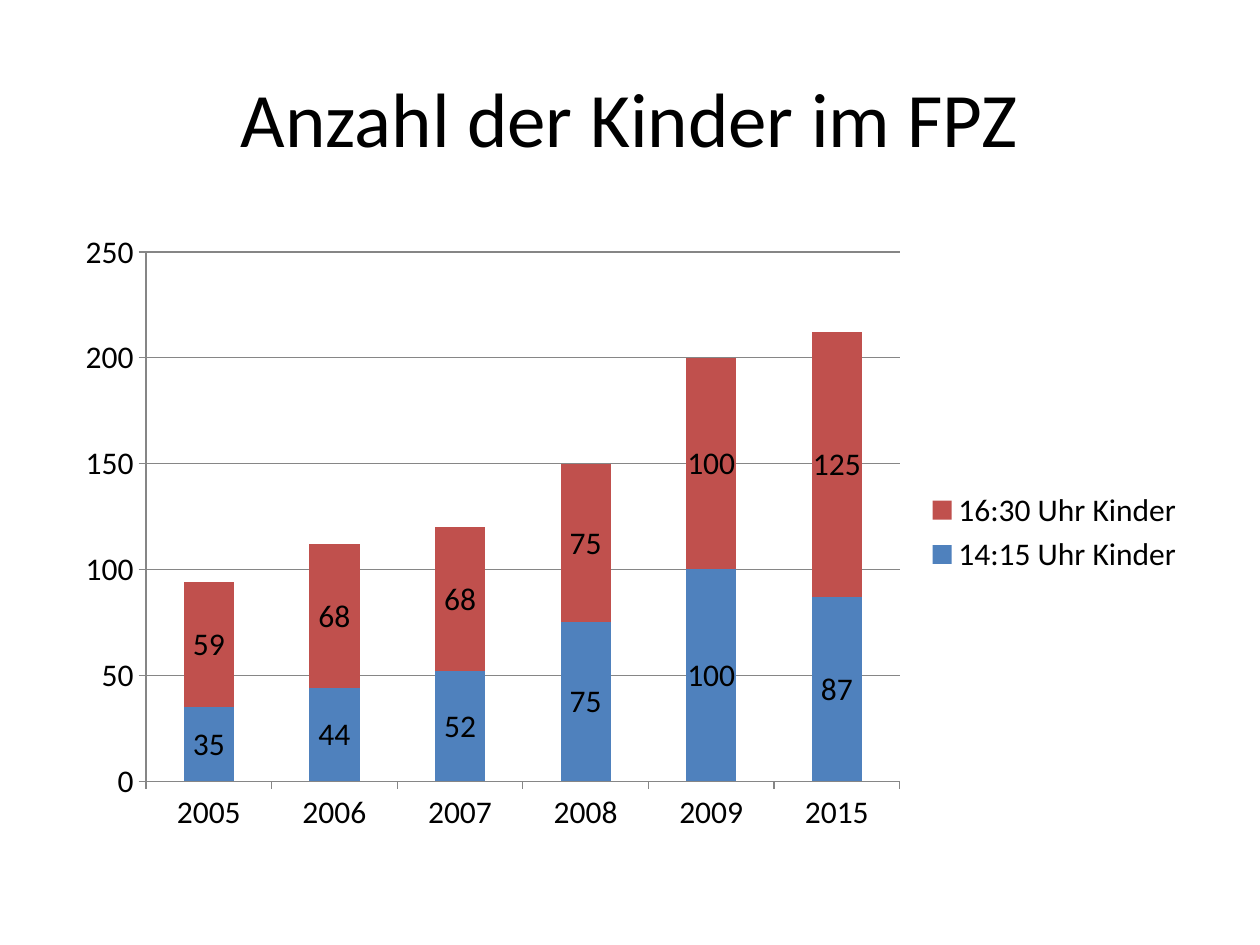
"""Build a slide with a stacked column chart of the number of children."""
from pptx import Presentation
from pptx import util as u
from pptx.chart.data import CategoryChartData
from pptx.dml.color import RGBColor
from pptx.enum import chart as ch, text

FONT = "Calibri"
YEARS = ["2005", "2006", "2007", "2008", "2009", "2015"]
SERIES = [
    ("14:15 Uhr Kinder", [35, 44, 52, 75, 100, 87], "4F81BD"),
    ("16:30 Uhr Kinder", [59, 68, 68, 75, 100, 125], "C0504D"),
]


def rgb(value):
    """Return the colour for a hex string."""
    return RGBColor.from_string(value)


def style_font(font, size):
    """Set the slide's typeface and colour at the given size."""
    font.name = FONT
    font.size = u.Pt(size)
    font.color.rgb = rgb("000000")


def place_title(slide, box):
    """Put the centred title into the box."""
    sp = slide.shapes.title
    sp.left, sp.top, sp.width, sp.height = box
    tf = sp.text_frame
    tf.text = "Anzahl der Kinder im FPZ"
    tf.word_wrap = True
    tf.vertical_anchor = text.MSO_ANCHOR.MIDDLE
    p = tf.paragraphs[0]
    p.alignment = text.PP_ALIGN.CENTER
    style_font(p.runs[0].font, 44)


def style_axis(axis):
    """Give an axis a grey line and outer tick marks."""
    axis.format.line.color.rgb = rgb("868686")
    axis.format.line.width = u.Pt(0.75)
    axis.major_tick_mark = ch.XL_TICK_MARK.OUTSIDE
    axis.minor_tick_mark = ch.XL_TICK_MARK.NONE


def place_chart(slide, box):
    """Put the stacked column chart into the box."""
    data = CategoryChartData(number_format="General")
    data.categories = YEARS
    for name, values, _ in SERIES:
        data.add_series(name, values)
    chart = slide.shapes.add_chart(
        ch.XL_CHART_TYPE.COLUMN_STACKED, *box, data).chart
    style_font(chart.font, 18)
    chart.has_title = False
    chart.has_legend = True
    chart.legend.position = ch.XL_LEGEND_POSITION.RIGHT
    chart.legend.include_in_layout = False

    style_axis(chart.category_axis)
    axis = chart.value_axis
    style_axis(axis)
    axis.minimum_scale, axis.maximum_scale, axis.major_unit = 0, 250, 50
    axis.has_major_gridlines = True
    line = axis.major_gridlines.format.line
    line.color.rgb = rgb("868686")
    line.width = u.Pt(0.75)

    plot = chart.plots[0]
    plot.gap_width, plot.overlap = 150, 100
    plot.vary_by_categories = False
    for series, (_, _, color) in zip(plot.series, SERIES):
        series.format.fill.solid()
        series.format.fill.fore_color.rgb = rgb(color)
        series.invert_if_negative = False
        labels = series.data_labels
        labels.show_value = True
        style_font(labels.font, 18)


def main():
    """Create and save the presentation."""
    prs = Presentation()
    prs.slide_width, prs.slide_height = u.Inches(10), u.Inches(7.5)
    w, h = prs.slide_width, prs.slide_height
    slide = prs.slides.add_slide(prs.slide_layouts[5])
    left, width = int(w * 0.05), int(w * 0.9)
    place_title(slide, (left, int(h * 0.04), width, int(h / 6)))
    place_chart(slide, (left, int(h * 7 / 30), width, int(h * 0.66)))
    prs.save("out.pptx")


if __name__ == "__main__":
    main()
